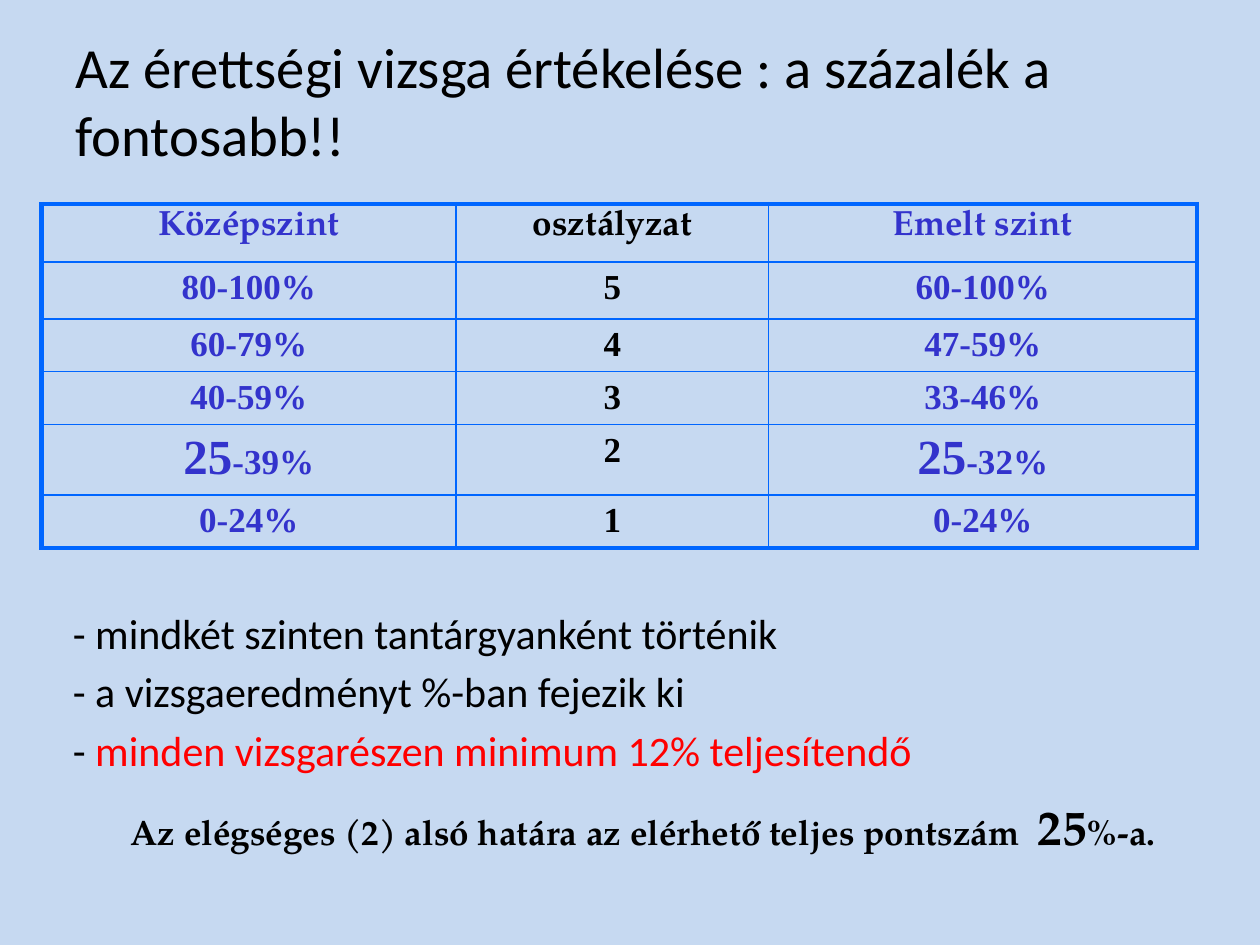
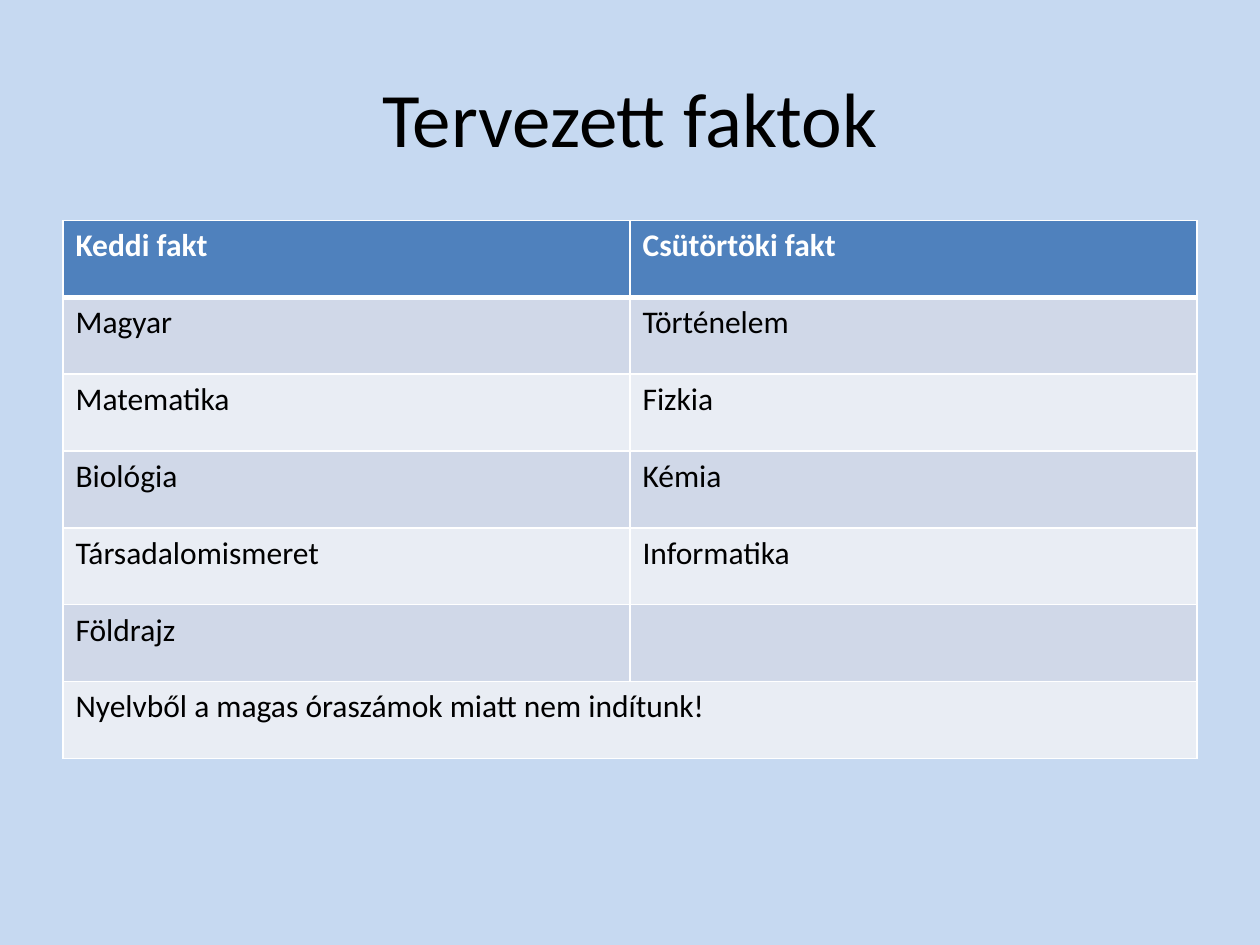
from lxml.etree import SubElement
from pptx import Presentation
from pptx.dml.color import RGBColor
from pptx.enum.text import MSO_ANCHOR, MSO_AUTO_SIZE, PP_ALIGN
from pptx.oxml.ns import qn
from pptx.util import Emu, Pt

EMU_PER_PX = 9144  # 100 px to the inch
COLORS = {
    "background": "C6D9F1", "text": "000000", "white": "FFFFFF",
    "alert": "FF0000", "level": "3333CC", "grid": "0066FF",
    "header": "4F81BD", "band_dark": "D0D8E8", "band_light": "E9EDF4",
    "shadow": "EEECE1",
}
BODY, SERIF, DIGITS = "Calibri", "TeX Gyre Pagella", "Times New Roman"


def px(length):
    return Emu(length * EMU_PER_PX)


def color(name):
    return RGBColor.from_string(COLORS[name])


def write(para, text, font=BODY, size=18, ink="text", bold=False, shadow=False):
    """Add one formatted span to a paragraph."""
    span = para.add_run()
    span.text = text
    span.font.name = font
    span.font.size = Pt(size)
    span.font.bold = bold
    span.font.color.rgb = color(ink)
    if shadow:
        properties = span.font._element
        effects = SubElement(properties, qn("a:effectLst"))
        cast = SubElement(effects, qn("a:outerShdw"), dist="25400", dir="2700000")
        SubElement(cast, qn("a:srgbClr"), val=COLORS["shadow"])
        properties.find(qn("a:solidFill")).addnext(effects)


class SlideBuilder:
    def __init__(self):
        self.deck = Presentation()
        self.deck.slide_width, self.deck.slide_height = px(1000), px(750)
        fill = self.deck.slide_master.background.fill
        fill.solid()
        fill.fore_color.rgb = color("background")
        self.page = None

    def add_page(self):
        self.page = self.deck.slides.add_slide(self.deck.slide_layouts[5])

    def title(self, text, place, align=PP_ALIGN.CENTER, **style):
        box = self.page.shapes.title
        box.left, box.top, box.width, box.height = map(px, place)
        frame = box.text_frame
        frame.word_wrap = True
        frame.auto_size = MSO_AUTO_SIZE.NONE
        frame.vertical_anchor = MSO_ANCHOR.MIDDLE
        para = frame.paragraphs[0]
        para.alignment = align
        write(para, text, **style)

    def text(self, lines, place, align=PP_ALIGN.LEFT):
        """Each line is a list of (text, style) spans."""
        frame = self.page.shapes.add_textbox(*map(px, place)).text_frame
        frame.word_wrap = True
        for index, spans in enumerate(lines):
            para = frame.add_paragraph() if index else frame.paragraphs[0]
            para.alignment = align
            para.space_before = Pt(4.8 if index else 0)
            for text, style in spans:
                write(para, text, **style)

    def table(self, corner, columns, rows):
        shape = self.page.shapes.add_table(
            len(rows), len(columns), *map(px, corner), px(sum(columns)), px(sum(rows)))
        table = shape.table
        table.first_row = table.horz_banding = False
        for column, width in zip(table.columns, columns):
            column.width = px(width)
        for row, height in zip(table.rows, rows):
            row.height = px(height)
        return table

    def cell(self, cell, spans, fill=None, align=PP_ALIGN.LEFT, side_margin=10):
        cell.margin_left = cell.margin_right = px(side_margin)
        cell.margin_top = cell.margin_bottom = px(5)
        if fill:
            cell.fill.solid()
            cell.fill.fore_color.rgb = color(fill)
        else:
            cell.fill.background()
        para = cell.text_frame.paragraphs[0]
        para.alignment = align
        for text, style in spans:
            write(para, text, **style)

    def borders(self, table, ink, heavy_rows=(), heavy_columns=()):
        """Rule the grid at 1 pt, and at 3 pt on the heavy edges."""
        for r in range(len(table.rows)):
            for c in range(len(table.columns)):
                properties = table.cell(r, c)._tc.get_or_add_tcPr()
                edges = (("L", c in heavy_columns), ("R", c + 1 in heavy_columns),
                         ("T", r in heavy_rows), ("B", r + 1 in heavy_rows))
                for position, (side, heavy) in enumerate(edges):
                    line = SubElement(properties, qn(f"a:ln{side}"),
                                      w=str(Pt(3 if heavy else 1)))
                    fill = SubElement(line, qn("a:solidFill"))
                    SubElement(fill, qn("a:srgbClr"), val=COLORS[ink])
                    properties.insert(position, line)


def grading_page(builder):
    builder.add_page()
    builder.title("Az érettségi vizsga értékelése : a százalék a fontosabb!!",
                  (50, 36, 900, 87), align=PP_ALIGN.LEFT, size=32.4, shadow=True)

    # Grade limits; a tuple holds an emphasised start and the rest
    grades = [
        ("Középszint", "osztályzat", "Emelt szint"),
        ("80-100%", "5", "60-100%"),
        ("60-79%", "4", "47-59%"),
        ("40-59%", "3", "33-46%"),
        (("25", "-39%"), "2", ("25", "-32%")),
        ("0-24%", "1", "0-24%"),
    ]
    table = builder.table((33, 162), (329, 248, 340), (46, 45, 42, 42, 56, 42))
    for r, row in enumerate(grades):
        for c, value in enumerate(row):
            style = dict(font=DIGITS if r else SERIF, size=20, bold=True,
                         ink="text" if c == 1 else "level")
            if isinstance(value, tuple):
                spans = [(value[0], {**style, "size": 28}), (value[1], style)]
            else:
                spans = [(value, style)]
            builder.cell(table.cell(r, c), spans, align=PP_ALIGN.CENTER, side_margin=14)
    builder.borders(table, "grid", heavy_rows=(0, 6), heavy_columns=(0, 3))

    # Rules below the table
    plain = dict(size=24)
    builder.text([
        [("- mindkét szinten tantárgyanként történik", plain)],
        [("- a vizsgaeredményt %-ban fejezik ki", plain)],
        [("- ", plain),
         ("minden vizsgarészen minimum 12% teljesítendő", dict(size=24, ink="alert"))],
    ], (48, 477, 745, 144))

    # Pass mark
    strong = dict(font=SERIF, size=20, bold=True)
    builder.text([[
        ("Az elégséges (2) alsó határa az elérhető teljes pontszám  ", strong),
        ("25", {**strong, "size": 28}),
        ("%-a.", strong),
    ]], (49, 627, 923, 55), align=PP_ALIGN.CENTER)


def electives_page(builder):
    builder.add_page()
    builder.title("Tervezett faktok", (50, 30, 900, 125), size=44)

    # Elective subjects by day, closed by a note across both columns
    subjects = [
        ("Keddi fakt", "Csütörtöki fakt"),
        ("Magyar", "Történelem"),
        ("Matematika", "Fizkia"),
        ("Biológia", "Kémia"),
        ("Társadalomismeret", "Informatika"),
        ("Földrajz", ""),
        ("Nyelvből a magas óraszámok miatt nem indítunk!", ""),
    ]
    table = builder.table((50, 175), (450, 450), [61] * len(subjects))
    for r, row in enumerate(subjects):
        if r == 0:
            fill, style = "header", dict(ink="white", bold=True)
        else:
            fill, style = ("band_dark" if r % 2 else "band_light"), {}
        for c, subject in enumerate(row):
            spans = [(subject, style)] if subject else []
            builder.cell(table.cell(r, c), spans, fill=fill)
    builder.borders(table, "white", heavy_rows=(1,))
    last = len(subjects) - 1
    table.cell(last, 0).merge(table.cell(last, 1))


def main():
    builder = SlideBuilder()
    grading_page(builder)
    electives_page(builder)
    builder.deck.save("out.pptx")


if __name__ == "__main__":
    main()
